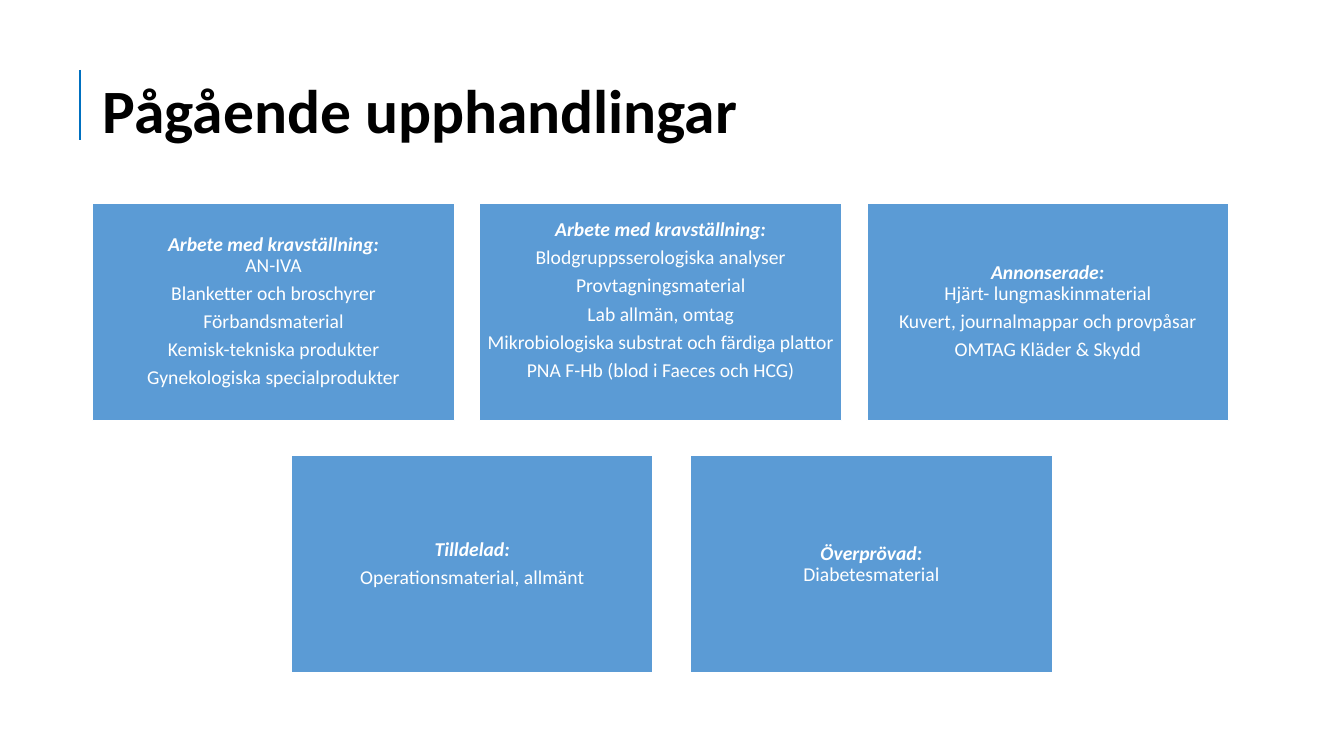
from pptx import Presentation
from pptx.dml.color import RGBColor
from pptx.enum.shapes import MSO_CONNECTOR, MSO_SHAPE
from pptx.enum.text import MSO_ANCHOR, MSO_AUTO_SIZE, PP_ALIGN
from pptx.oxml.ns import qn
from pptx.util import Pt
from lxml import etree

TITLE = "Pågående upphandlingar"

# Heading, whether the first item shares the heading's paragraph, items
KRAV_VARD = ("Arbete med kravställning:", True, [
    "AN-IVA", "Blanketter och broschyrer", "Förbandsmaterial",
    "Kemisk-tekniska produkter", "Gynekologiska specialprodukter"])
KRAV_LAB = ("Arbete med kravställning:", False, [
    "Blodgruppsserologiska analyser", "Provtagningsmaterial",
    "Lab allmän, omtag", "Mikrobiologiska substrat och färdiga plattor",
    "PNA F-Hb (blod i Faeces och HCG)"])
ANNONSERADE = ("Annonserade:", True, [
    "Hjärt- lungmaskinmaterial", "Kuvert, journalmappar och provpåsar",
    "OMTAG Kläder & Skydd"])
TILLDELAD = ("Tilldelad:", False, ["Operationsmaterial, allmänt"])
OVERPROVAD = ("Överprövad:", True, ["Diabetesmaterial"])

# Left edge, top, step between boxes, boxes
ROWS = [
    (66.2, 144.9, 276.5, [KRAV_VARD, KRAV_LAB, ANNONSERADE]),
    (208.1, 325.4, 285.1, [TILLDELAD, OVERPROVAD]),
]
BOX_WIDTH, BOX_HEIGHT = 258.5, 155.5
INSET = 4.2
LIFTED_INSET = 20  # bottom inset that raises the text of the lab box

FONT = "Calibri"
BLACK = RGBColor(0x00, 0x00, 0x00)
WHITE = RGBColor(0xFF, 0xFF, 0xFF)
BOX_BLUE = RGBColor(0x5B, 0x9B, 0xD5)
RULE_BLUE = RGBColor(0x00, 0x70, 0xC0)
RECTANGLE = MSO_SHAPE.RECTANGLE
MIDDLE = MSO_ANCHOR.MIDDLE
LEFT, CENTER = PP_ALIGN.LEFT, PP_ALIGN.CENTER


def format_paragraph(paragraph, size, color, align):
    paragraph.alignment = align
    paragraph.line_spacing = 0.9
    paragraph.font.name = FONT
    paragraph.font.size = Pt(size)
    paragraph.font.color.rgb = color


def add_title(slide):
    title = slide.shapes.title
    title.left, title.top, title.width, title.height = (
        Pt(66.2), Pt(28.8), Pt(828), Pt(104.4))
    frame = title.text_frame
    frame.text = TITLE
    frame.auto_size = MSO_AUTO_SIZE.NONE
    frame.vertical_anchor = MIDDLE
    format_paragraph(frame.paragraphs[0], 44, BLACK, LEFT)
    frame.paragraphs[0].font.bold = True

    rule = slide.shapes.add_connector(
        MSO_CONNECTOR.STRAIGHT, Pt(57), Pt(50), Pt(57), Pt(100))
    rule.line.color.rgb = RULE_BLUE
    rule.line.width = Pt(1.5)
    etree.SubElement(rule.line._get_or_add_ln().getparent(), qn("a:effectLst"))


def add_box(slide, left, top, procurement):
    heading, joined, items = procurement
    box = slide.shapes.add_shape(
        RECTANGLE, Pt(left), Pt(top), Pt(BOX_WIDTH), Pt(BOX_HEIGHT))
    box.shadow.inherit = False
    box.fill.solid()
    box.fill.fore_color.rgb = BOX_BLUE
    box.line.color.rgb = WHITE
    box.line.width = Pt(1)

    frame = box.text_frame
    frame.word_wrap = True
    frame.vertical_anchor = MIDDLE
    frame.margin_left = frame.margin_right = frame.margin_top = Pt(INSET)
    frame.margin_bottom = Pt(LIFTED_INSET if procurement is KRAV_LAB else INSET)

    paragraph = frame.paragraphs[0]
    heading_run = paragraph.add_run()
    heading_run.text = heading
    heading_run.font.bold = heading_run.font.italic = True
    for index, item in enumerate(items):
        if joined and index == 0:
            paragraph.add_line_break()
        else:
            paragraph = frame.add_paragraph()
        paragraph.add_run().text = item
    for paragraph in frame.paragraphs:
        format_paragraph(paragraph, 14, WHITE, CENTER)
        paragraph.space_after = Pt(4.9)


def main():
    presentation = Presentation()
    presentation.slide_width, presentation.slide_height = Pt(960), Pt(540)
    slide = presentation.slides.add_slide(presentation.slide_layouts[5])
    add_title(slide)
    for left, top, step, procurements in ROWS:
        for column, procurement in enumerate(procurements):
            add_box(slide, left + column * step, top, procurement)
    presentation.save("out.pptx")


if __name__ == "__main__":
    main()
